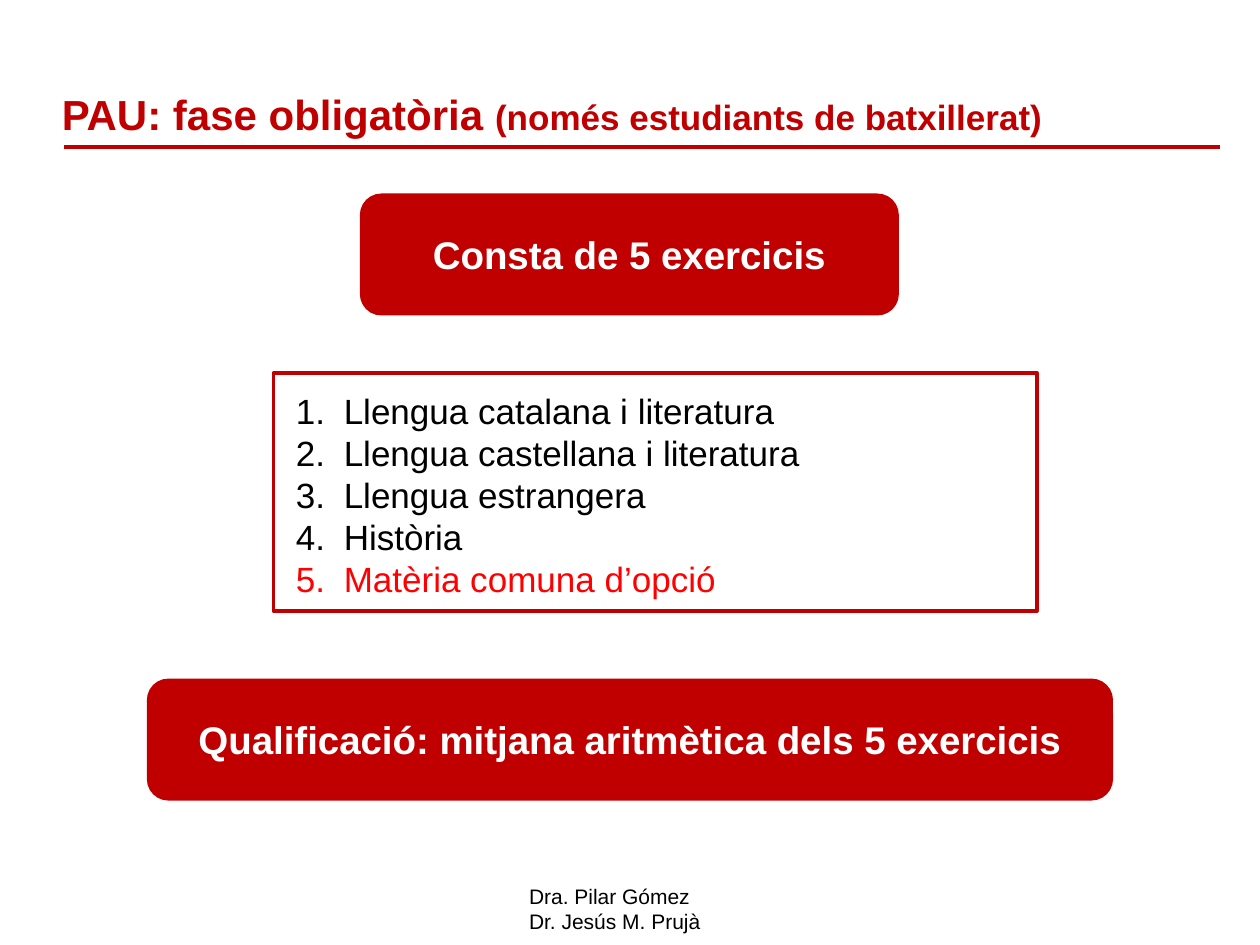
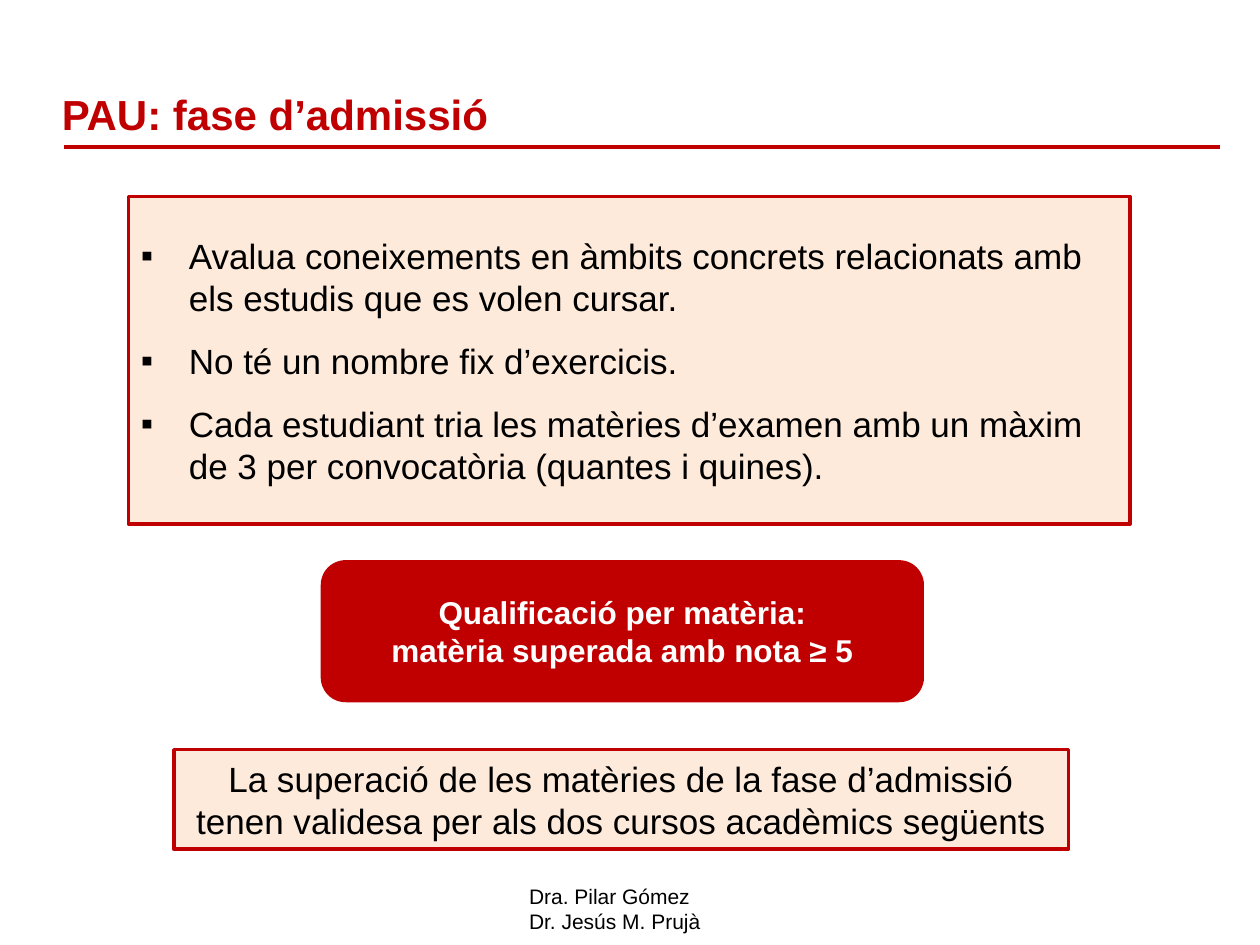
from lxml import etree
from pptx import Presentation
from pptx.dml.color import RGBColor
from pptx.enum import shapes, text
from pptx.oxml.ns import qn
from pptx.util import Inches, Pt

RED = RGBColor(0xC0, 0x00, 0x00)
BRIGHT_RED = RGBColor(0xFF, 0x00, 0x00)
PEACH = RGBColor(0xFD, 0xEA, 0xDA)
BLACK = RGBColor(0x00, 0x00, 0x00)
WHITE = RGBColor(0xFF, 0xFF, 0xFF)
FONT = "Arial"
HANG = Inches(0.38)
TITLE_ONLY = 5


def add_run(para, words, size, color, bold=False):
    span = para.add_run()
    span.text = words
    span.font.name = FONT
    span.font.size = Pt(size)
    span.font.bold = bold
    span.font.color.rgb = color


def next_paragraph(frame):
    """Return the frame's empty first paragraph, or a new one after it."""
    first = frame.paragraphs[0]
    return frame.add_paragraph() if first.runs else first


def write_lines(frame, lines, size, color, bold=False, align=text.PP_ALIGN.LEFT):
    for line in lines:
        para = next_paragraph(frame)
        para.alignment = align
        add_run(para, line, size, color, bold)


def add_list_item(frame, words, color=BLACK, bullet=None, gap=0):
    """Add a hanging item, numbered unless a bullet character is given."""
    para = next_paragraph(frame)
    para.alignment = text.PP_ALIGN.LEFT
    props = para._p.get_or_add_pPr()
    props.set("marL", str(HANG))
    props.set("indent", str(-HANG))
    etree.SubElement(props, qn("a:buFont"), typeface=FONT)
    if bullet:
        etree.SubElement(props, qn("a:buChar"), char=bullet)
    else:
        etree.SubElement(props, qn("a:buAutoNum"), type="arabicPeriod")
    if para is not frame.paragraphs[0] and len(frame.paragraphs) > 1:
        para.space_before = Pt(gap)
    add_run(para, words, 20, color)


def add_box(page, kind, left, top, width, height, fill=None):
    """Add a red-edged shape and return its text frame."""
    box = page.shapes.add_shape(
        kind, Inches(left), Inches(top), Inches(width), Inches(height))
    box.shadow.inherit = False
    if fill is None:
        box.fill.background()
    else:
        box.fill.solid()
        box.fill.fore_color.rgb = fill
    box.line.color.rgb = RED
    box.line.width = Pt(2)
    frame = box.text_frame
    frame.word_wrap = True
    frame.vertical_anchor = text.MSO_ANCHOR.MIDDLE
    return frame


def add_panel(page, left, top, width, height, fill=None):
    return add_box(page, shapes.MSO_SHAPE.RECTANGLE,
                   left, top, width, height, fill)


def add_banner(page, left, top, width, height, lines, size=22):
    frame = add_box(page, shapes.MSO_SHAPE.ROUNDED_RECTANGLE,
                    left, top, width, height, RED)
    write_lines(frame, lines, size, WHITE, True, text.PP_ALIGN.CENTER)


def add_rule(page):
    rule = page.shapes.add_connector(
        shapes.MSO_CONNECTOR.STRAIGHT,
        Inches(0.51), Inches(1.17), Inches(9.68), Inches(1.17))
    rule.line.color.rgb = RED
    rule.line.width = Pt(2.25)
    etree.SubElement(rule._element.spPr, qn("a:effectLst"))
    return rule


def add_authors(page):
    box = page.shapes.add_textbox(
        Inches(4.1), Inches(6.96), Inches(1.58), Inches(0.5))
    box.text_frame.word_wrap = False
    write_lines(box.text_frame, ["Dra. Pilar Gómez", "Dr. Jesús M. Prujà"],
                12, BLACK)
    return box


def share_on_layout(page):
    """Draw the title rule and the authors once, on the page's layout."""
    layout_tree = page.slide_layout.shapes.element
    for item in (add_rule(page), add_authors(page)):
        layout_tree.append(item.element)


def add_page(deck, title, note=None):
    page = deck.slides.add_slide(deck.slide_layouts[TITLE_ONLY])
    holder = page.shapes.title
    holder.left, holder.top = Inches(0.39), Inches(0.63)
    holder.width, holder.height = Inches(9.37), Inches(0.55)
    frame = holder.text_frame
    frame.auto_size = text.MSO_AUTO_SIZE.NONE
    frame.vertical_anchor = text.MSO_ANCHOR.MIDDLE
    write_lines(frame, [title], 24, RED, True)
    if note:
        add_run(frame.paragraphs[0], note, 20, RED, True)
    return page


def build_compulsory_phase(deck):
    page = add_page(deck, "PAU: fase obligatòria ",
                    "(només estudiants de batxillerat)")
    share_on_layout(page)
    add_banner(page, 2.87, 1.55, 4.25, 0.94, ["Consta de 5 exercicis"])

    exams = page.shapes.add_textbox(
        Inches(2.25), Inches(3.04), Inches(5.91), Inches(1.78)).text_frame
    exams.word_wrap = True
    for subject in ("Llengua catalana i literatura",
                    "Llengua castellana i literatura",
                    "Llengua estrangera",
                    "Història"):
        add_list_item(exams, subject)
    add_list_item(exams, "Matèria comuna d’opció", BRIGHT_RED)
    add_panel(page, 2.17, 2.96, 6.06, 1.89)

    add_banner(page, 1.18, 5.4, 7.64, 0.94,
               ["Qualificació: mitjana aritmètica dels 5 exercicis"])


def build_admission_phase(deck):
    page = add_page(deck, "PAU: fase d’admissió")
    features = add_panel(page, 1.02, 1.56, 7.95, 2.6, PEACH)
    for feature in (
            "Avalua coneixements en àmbits concrets relacionats amb "
            "els estudis que es volen cursar.",
            "No té un nombre fix d’exercicis.",
            "Cada estudiant tria les matèries d’examen amb un màxim "
            "de 3 per convocatòria (quantes i quines)."):
        add_list_item(features, feature, bullet="▪", gap=12)

    add_banner(page, 2.56, 4.46, 4.76, 1.1,
               ["Qualificació per matèria:", "matèria superada amb nota ≥ 5"],
               size=18)

    validity = add_panel(page, 1.38, 5.95, 7.1, 0.79, PEACH)
    write_lines(validity,
                ["La superació de les matèries de la fase d’admissió",
                 "tenen validesa per als dos cursos acadèmics següents"],
                20, BLACK, align=text.PP_ALIGN.CENTER)


def main():
    deck = Presentation()
    deck.slide_width, deck.slide_height = Inches(10), Inches(7.5)
    build_compulsory_phase(deck)
    build_admission_phase(deck)
    deck.save("out.pptx")


if __name__ == "__main__":
    main()
